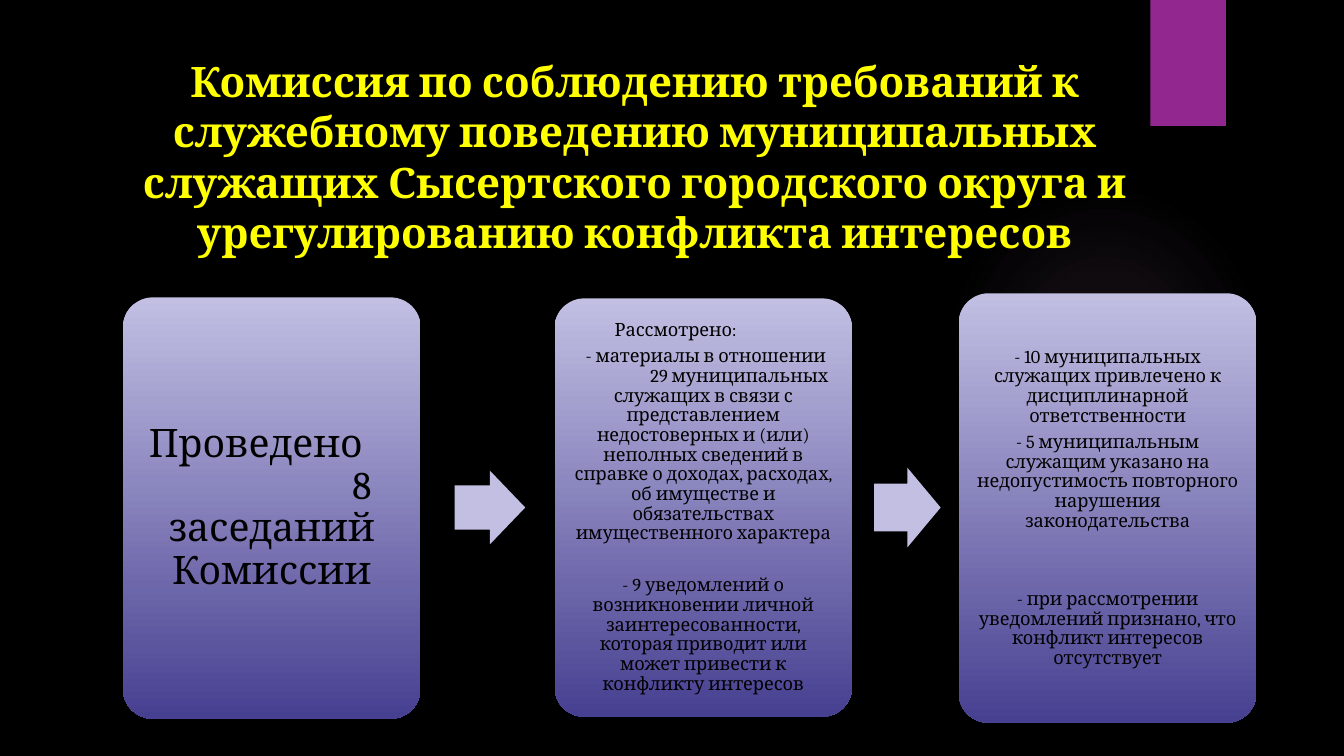
"""Build the slide on the work of the conflict of interest commission."""
from dataclasses import dataclass

from pptx import Presentation
from pptx.dml.color import RGBColor
from pptx.enum import shapes, text
from pptx.oxml import ns, parse_xml
from pptx.util import Inches, Pt

CENTER, LEFT, RIGHT = text.PP_ALIGN.CENTER, text.PP_ALIGN.LEFT, text.PP_ALIGN.RIGHT
SHAPE = shapes.MSO_SHAPE


@dataclass(frozen=True)
class Theme:
    font: str = "Cambria"
    background: str = "000000"
    heading: str = "FFFF00"
    body: str = "000000"
    ribbon: str = "92278F"
    glow: str = "D19BD0"
    card_top: str = "C2BFE3"
    card_bottom: str = "474091"
    heading_size: float = 30
    figure_size: float = 28
    body_size: float = 13
    gap: float = 4.7


THEME = Theme()


@dataclass(frozen=True)
class Box:
    left: float
    top: float
    width: float
    height: float

    def lengths(self):
        return [Inches(v) for v in (self.left, self.top, self.width, self.height)]


@dataclass(frozen=True)
class Line:
    words: str
    before: float = 0
    align: text.PP_ALIGN = CENTER
    margin_left: float = 0
    margin_right: float = 0


@dataclass(frozen=True)
class Card:
    box: Box
    lines: tuple[Line, ...]
    size: float = THEME.body_size
    inset: float = 0.05


CARDS = (
    Card(Box(1.22, 2.95, 2.95, 4.18), (
        Line("Проведено", align=LEFT, margin_left=0.05),
        Line("8", align=RIGHT, margin_right=0.28),
        Line("заседаний Комиссии"),
    ), size=THEME.figure_size, inset=0.12),
    Card(Box(5.5, 2.96, 2.95, 4.15), (
        Line("Рассмотрено:", align=LEFT, margin_left=0.46),
        Line("- материалы в отношении", THEME.gap, margin_left=0.05),
        Line("29 муниципальных", align=RIGHT, margin_right=0.1),
        Line("служащих в связи с представлением недостоверных и (или) неполных "
             "сведений в справке о доходах, расходах, об имуществе и "
             "обязательствах имущественного характера"),
        Line("- 9 уведомлений о возникновении личной заинтересованности, которая "
             "приводит или может привести к конфликту интересов", 23),
    )),
    Card(Box(9.51, 2.91, 2.95, 4.26), (
        Line("- 10 муниципальных служащих привлечено к дисциплинарной ответственности"),
        Line("- 5 муниципальным служащим указано на недопустимость повторного "
             "нарушения законодательства", THEME.gap),
        Line("- при рассмотрении уведомлений признано, что конфликт интересов "
             "отсутствует", 41.7),
    )),
)
ARROWS = (Box(4.51, 4.67, 0.7, 0.73), Box(8.67, 4.64, 0.66, 0.79))
HEADING = Line("Комиссия по соблюдению требований к служебному поведению муниципальных "
               "служащих Сысертского городского округа и урегулированию конфликта "
               "интересов")


def write(frame, lines: tuple[Line, ...], *, size: float, color: str,
          bold: bool = False, spacing: float = 1.0) -> None:
    frame.word_wrap = True
    for index, line in enumerate(lines):
        paragraph = frame.add_paragraph() if index else frame.paragraphs[0]
        paragraph.alignment = line.align
        paragraph.line_spacing = spacing
        if line.before:
            paragraph.space_before = Pt(line.before)
        properties = paragraph._p.get_or_add_pPr()
        properties.set("marL", str(Inches(line.margin_left)))
        properties.set("marR", str(Inches(line.margin_right)))
        run = paragraph.add_run()
        run.text = line.words
        run.font.name = THEME.font
        run.font.size = Pt(size)
        run.font.bold = bold
        run.font.color.rgb = RGBColor.from_string(color)


def add_plain(slide, kind: SHAPE, box: Box, color: str):
    plain = slide.shapes.add_shape(kind, *box.lengths())
    plain.shadow.inherit = False
    plain.line.fill.background()
    plain.fill.solid()
    plain.fill.fore_color.rgb = RGBColor.from_string(color)
    return plain


def add_glow(slide, box: Box) -> None:
    glow = add_plain(slide, SHAPE.OVAL, box, THEME.glow)
    stops = "".join(
        f'<a:gs pos="{place * 1000}"><a:srgbClr val="{THEME.glow}">'
        f'<a:alpha val="{alpha * 1000}"/></a:srgbClr></a:gs>'
        for place, alpha in ((0, 7), (36, 6), (69, 0)))
    gradient = parse_xml(
        f'<a:gradFill {ns.nsdecls("a")}><a:gsLst>{stops}</a:gsLst><a:path path="circle">'
        '<a:fillToRect l="50000" t="50000" r="50000" b="50000"/></a:path></a:gradFill>')
    properties = glow._element.spPr
    properties.replace(properties.find(ns.qn("a:solidFill")), gradient)


def add_card(slide, card: Card) -> None:
    panel = add_plain(slide, SHAPE.ROUNDED_RECTANGLE, card.box, THEME.card_top)
    panel.adjustments[0] = 0.1
    panel.fill.gradient()
    panel.fill.gradient_angle = 270
    for stop, color in zip(panel.fill.gradient_stops, (THEME.card_top, THEME.card_bottom)):
        stop.color.rgb = RGBColor.from_string(color)
    frame = panel.text_frame
    frame.vertical_anchor = text.MSO_ANCHOR.MIDDLE
    frame.margin_left = frame.margin_right = Inches(card.inset)
    frame.margin_top = frame.margin_bottom = Inches(card.inset)
    write(frame, card.lines, size=card.size, color=THEME.body, spacing=0.9)


def main() -> None:
    deck = Presentation()
    deck.slide_width, deck.slide_height = Inches(13.33), Inches(7.5)
    slide = deck.slides.add_slide(deck.slide_layouts[6])
    slide.background.fill.solid()
    slide.background.fill.fore_color.rgb = RGBColor.from_string(THEME.background)

    add_glow(slide, Box(9.41, 1.83, 3.08, 3.08))
    add_plain(slide, SHAPE.RECTANGLE, Box(11.41, 0, 0.75, 1.25), THEME.ribbon)
    heading = slide.shapes.add_textbox(*Box(1.21, 0.5, 10.18, 2.63).lengths())
    write(heading.text_frame, (HEADING,), size=THEME.heading_size,
          color=THEME.heading, bold=True)
    for card in CARDS:
        add_card(slide, card)
    for box in ARROWS:
        arrow = add_plain(slide, SHAPE.RIGHT_ARROW, box, THEME.card_top)
        arrow.adjustments[0] = 0.6
    deck.save("out.pptx")


if __name__ == "__main__":
    main()
